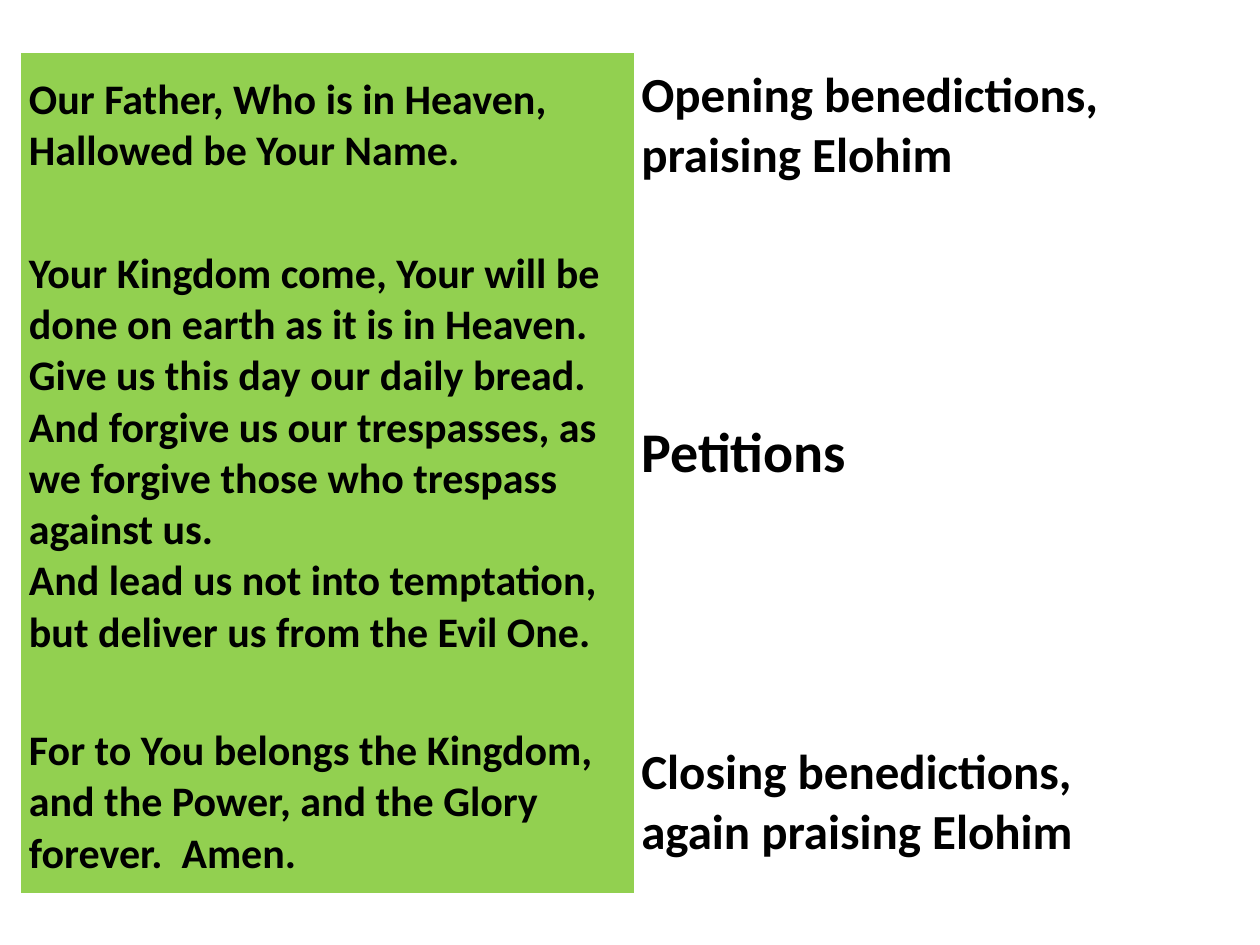
import pptx
import pptx.dml.color
import pptx.enum.text
import pptx.oxml.ns
import pptx.util

Inches = pptx.util.Inches

COLORS = {"prayer": "92D050", "text": "000000"}
NO_STYLE_NO_GRID = "{2D5ABB26-0587-4C30-8999-92F81FD0307C}"

# Content: prayer text, its part in the structure, size of the part's name
PRAYER_SIZE = 24
ROWS = [
    ("Our Father, Who is in Heaven, Hallowed be Your Name.",
     "Opening benedictions, praising Elohim", 28),
    ("Your Kingdom come, Your will be done on earth as it is in Heaven.\n"
     "Give us this day our daily bread.\n"
     "And forgive us our trespasses, as we forgive those who trespass against us.\n"
     "And lead us not into temptation, but deliver us from the Evil One.",
     "Petitions", 32),
    ("For to You belongs the Kingdom, and the Power, and the Glory forever.  Amen.",
     "Closing benedictions, again praising Elohim", 28),
]

# Layout
LEFT, TOP = 0.17, 0.42
COLUMN_WIDTHS = [4.86, 4.48]
ROW_HEIGHTS = [1.13, 4.08, 1.46]
CELL_FORMAT = {
    "margin_left": Inches(0.06),
    "margin_top": Inches(0.06),
    "margin_right": Inches(0.06),
    "margin_bottom": Inches(0.04),
    "vertical_anchor": pptx.enum.text.MSO_ANCHOR.MIDDLE,
}
FONT_FORMAT = {"name": "Calibri", "bold": True}


def set_attributes(target, values):
    for name, value in values.items():
        setattr(target, name, value)


def fill_cell(cell, text, size, fill=None):
    set_attributes(cell, CELL_FORMAT)
    if fill:
        cell.fill.solid()
        cell.fill.fore_color.rgb = pptx.dml.color.RGBColor.from_string(fill)
    else:
        cell.fill.background()
    paragraph = cell.text_frame.paragraphs[0]
    paragraph.text = text  # a newline becomes a line break
    for run in paragraph.runs:
        set_attributes(run.font, {**FONT_FORMAT, "size": pptx.util.Pt(size)})
        run.font.color.rgb = pptx.dml.color.RGBColor.from_string(COLORS["text"])


def main():
    presentation = pptx.Presentation()
    presentation.slide_width = Inches(10)
    presentation.slide_height = Inches(7.5)
    slide = presentation.slides.add_slide(presentation.slide_layouts[6])

    # Table without style, banding or grid
    shape = slide.shapes.add_table(
        len(ROWS), len(COLUMN_WIDTHS), Inches(LEFT), Inches(TOP),
        Inches(sum(COLUMN_WIDTHS)), Inches(sum(ROW_HEIGHTS)))
    table = shape.table
    set_attributes(table, {"first_row": False, "horz_banding": False})
    for style in shape.element.iter(pptx.oxml.ns.qn("a:tableStyleId")):
        style.text = NO_STYLE_NO_GRID
    for column, width in zip(table.columns, COLUMN_WIDTHS):
        column.width = Inches(width)

    # Prayer on the left, structure on the right
    for row, height, (prayer, part, part_size) in zip(table.rows, ROW_HEIGHTS, ROWS):
        row.height = Inches(height)
        fill_cell(row.cells[0], prayer, PRAYER_SIZE, COLORS["prayer"])
        fill_cell(row.cells[1], part, part_size)

    presentation.save("out.pptx")


if __name__ == "__main__":
    main()
